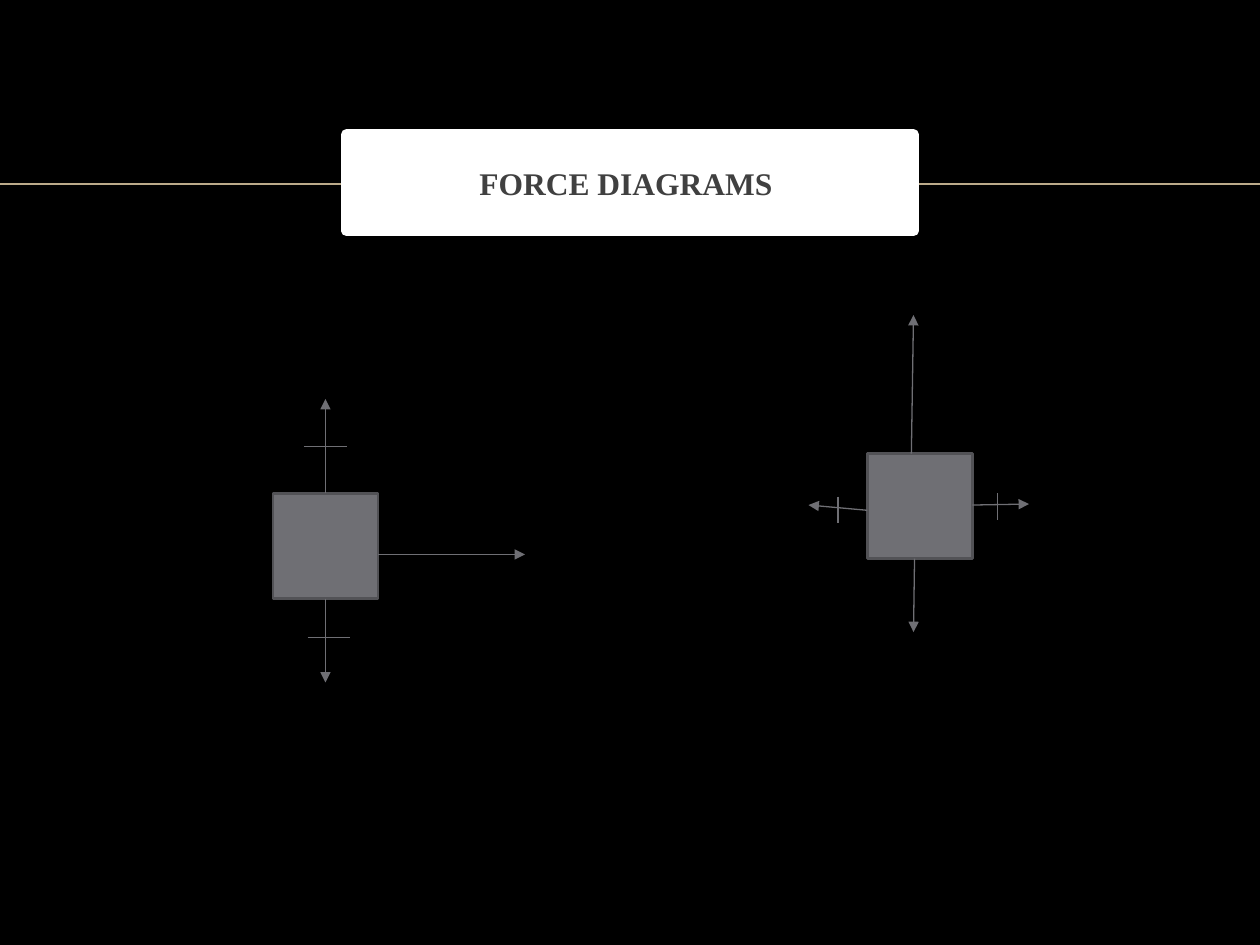
import pptx
import pptx.util
import pptx.dml.color
import pptx.enum.shapes
import pptx.enum.text
import pptx.oxml
import pptx.oxml.ns
import lxml.etree

COLS, ROWS = 120, 90
GRAY, EDGE = "6F6F74", "525256"


def tint(code):
    return pptx.dml.color.RGBColor.from_string(code)


class Deck:
    font = "Times New Roman"

    def __init__(self):
        self.file = pptx.Presentation()
        self.file.slide_width = pptx.util.Inches(10)
        self.file.slide_height = pptx.util.Inches(7.5)
        self.page = self.file.slides.add_slide(self.file.slide_layouts[6])
        fill = self.page.background.fill
        fill.solid()
        fill.fore_color.rgb = tint("000000")

    def grid(self, *spots):
        steps = (self.file.slide_width / COLS, self.file.slide_height / ROWS)
        return [round(spot * steps[i % 2]) for i, spot in enumerate(spots)]

    def box(self, left, top, wide, high, fill, edge, width):
        kind = pptx.enum.shapes.MSO_SHAPE.RECTANGLE
        shape = self.page.shapes.add_shape(kind, *self.grid(left, top, wide, high))
        shape.shadow.inherit = False
        shape.fill.solid()
        shape.fill.fore_color.rgb = tint(fill)
        shape.line.color.rgb = tint(edge)
        shape.line.width = pptx.util.Pt(width)
        return shape

    def title(self, text, *place):
        frame = self.box(*place, "FFFFFF", "FFFFFF", 6).text_frame
        frame.word_wrap = True
        frame.vertical_anchor = pptx.enum.text.MSO_ANCHOR.MIDDLE
        para = frame.paragraphs[0]
        para.alignment = pptx.enum.text.PP_ALIGN.CENTER
        para.space_before = pptx.util.Pt(4)
        run = para.add_run()
        run.text = text
        run.font.name = self.font
        run.font.size = pptx.util.Pt(18)
        run.font.bold = True
        run.font.color.rgb = tint("404040")

    def line(self, *ends, color=GRAY, width=0.75, arrow=False):
        kind = pptx.enum.shapes.MSO_CONNECTOR.STRAIGHT
        shape = self.page.shapes.add_connector(kind, *self.grid(*ends))
        shape.line.color.rgb = tint(color)
        shape.line.width = pptx.util.Pt(width)
        name = pptx.oxml.ns.qn
        props = shape._element.spPr
        if arrow:
            stroke = props.find(name("a:ln"))
            lxml.etree.SubElement(stroke, name("a:tailEnd"), type="triangle")
        lxml.etree.SubElement(props, name("a:effectLst"))


def main():
    deck = Deck()
    deck.line(0, 17.5, COLS, 17.5, color="BBAA8A", width=1)
    deck.title("FORCE DIAGRAMS ", 33, 12.8, 54, 9.2)

    for left, top in ((26, 47), (82.6, 43.2)):
        deck.box(left, top, 10, 10, GRAY, EDGE, 1.5)

    forces = (
        (31, 47, 31, 38),
        (31, 57, 31, 65),
        (36, 52.8, 50, 52.8),
        (87.1, 53.2, 87, 60.2),
        (86.8, 43.2, 87, 30),
        (92.6, 48.1, 98, 48),
        (82.6, 48.6, 77, 48.1),
    )
    for ends in forces:
        deck.line(*ends, arrow=True)

    for left, top in ((29, 42.5), (29.3, 60.7)):
        deck.line(left, top, left + 4, top)
    for left, top in ((95, 47), (79.8, 47.3)):
        deck.line(left, top, left, top + 2.5)

    deck.file.save("out.pptx")


if __name__ == "__main__":
    main()
